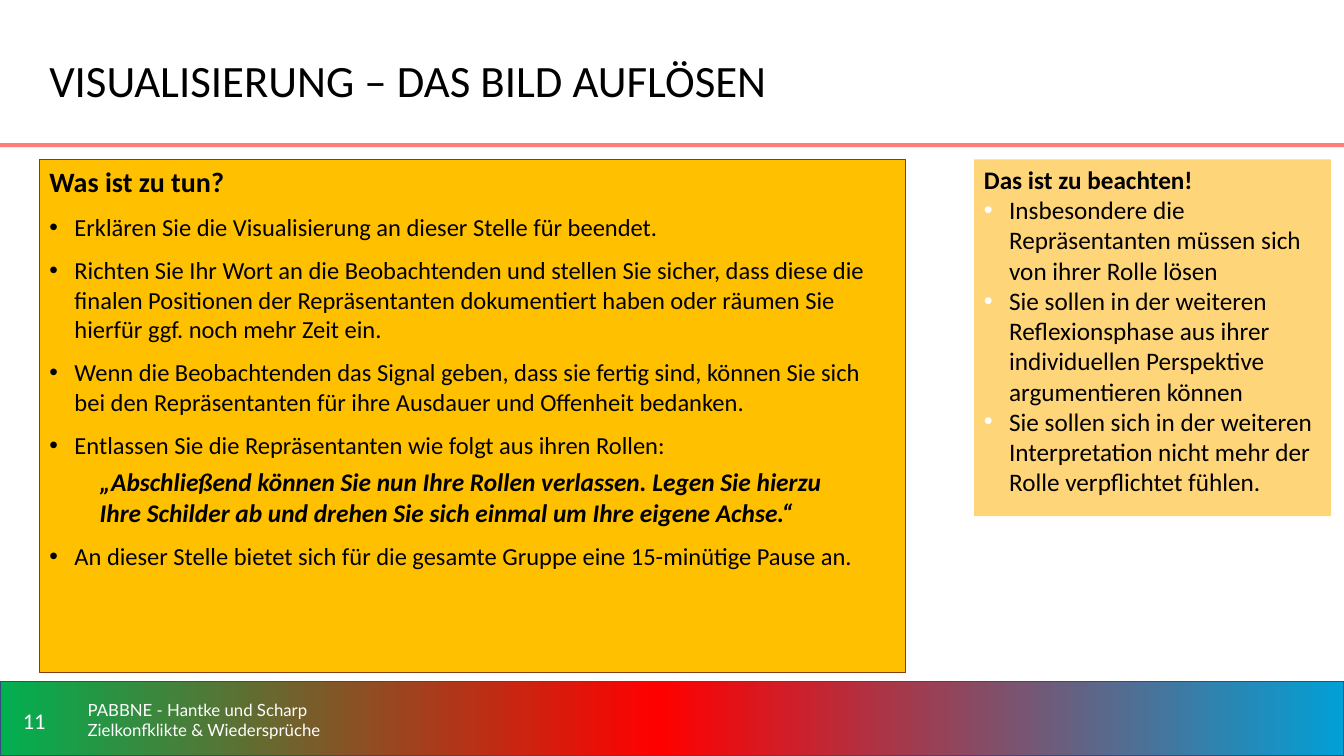
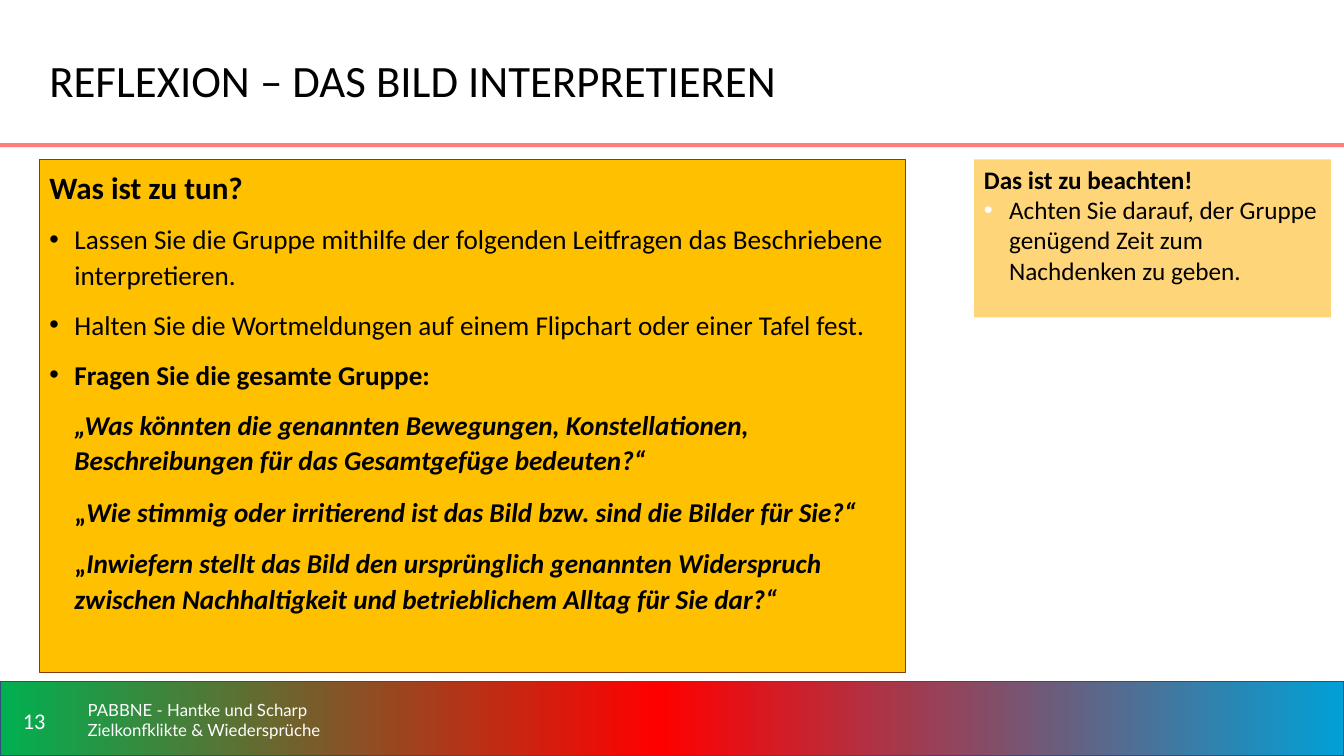
from copy import deepcopy

from lxml import etree
from pptx import Presentation
from pptx.dml.color import RGBColor
from pptx.enum.shapes import MSO_SHAPE
from pptx.enum.text import MSO_ANCHOR, PP_ALIGN
from pptx.oxml.ns import qn
from pptx.util import Inches, Pt

RECT = MSO_SHAPE.RECTANGLE
TOP, MIDDLE = MSO_ANCHOR.TOP, MSO_ANCHOR.MIDDLE
LEFT, CENTER = PP_ALIGN.LEFT, PP_ALIGN.CENTER

COLORS = {
    "text": "000000",
    "light": "FFFFFF",
    "rule": "FF7E79",
    "task": "FFC000",
    "task_line": "833C0B",
    "note": "FFD579",
    "band_line": "364A7D",
}
BAND_STOPS = [(0, "00B050"), (0.49, "FF0000"), (1, "01A0D6")]
BODY_FONT, CREDIT_FONT = "Calibri", "Lato"
CREDIT = "PABBNE - Hantke und Scharp Zielkonfklikte & Wiedersprüche"
TASK_HEAD, NOTE_HEAD = "Was ist zu tun?", "Das ist zu beachten!"

SLIDE = (0, 0, Inches(13.33), Inches(7.5))
REGIONS = {
    "title": (2.93, 2.67, 73.8, 15.73),
    "rule": (0, 18.93, 100, 0.53),
    "task": (2.93, 21.07, 64.44, 67.87),
    "note": (72.47, 21.07, 26.56, 0),
    "footer": (0, 90.13, 100, 9.87),
}


def rgb(name):
    return RGBColor.from_string(COLORS[name])


def part(box, shares):
    x, y, w, h = box
    px, py, pw, ph = shares
    return [round(v) for v in (x + w * px / 100, y + h * py / 100,
                               w * pw / 100, h * ph / 100)]


def head(text, **fmt):
    return {"runs": [(text, {"bold": True})], **fmt}


def item(text, bold=False, **fmt):
    return {"runs": [(text, {"bold": bold})], "indent": 0.25, "bullet": True, **fmt}


def quote(text, mark="", **fmt):
    runs = [(mark, {"bold": True})] if mark else []
    runs.append((text, {"bold": True, "italic": True}))
    return {"runs": runs, "indent": 0.25, "level": 1, **fmt}


def set_indent(p, indent, bullet_color):
    pPr = p._p.get_or_add_pPr()
    pPr.set("marL", str(Inches(indent)))
    pPr.set("indent", str(-Inches(indent) if bullet_color else 0))
    if bullet_color:
        clr = etree.SubElement(pPr, qn("a:buClr"))
        etree.SubElement(clr, qn("a:srgbClr"), val=COLORS[bullet_color])
        etree.SubElement(pPr, qn("a:buFont"), typeface="Arial")
        etree.SubElement(pPr, qn("a:buChar"), char="•")


def write(sp, paragraphs, size, color="text", font=BODY_FONT, anchor=TOP,
          align=LEFT, spacing=1.0, bullet_color="text"):
    tf = sp.text_frame
    frame = {"word_wrap": True, "vertical_anchor": anchor,
             "margin_left": Inches(0.1), "margin_right": Inches(0.1),
             "margin_top": Inches(0.05), "margin_bottom": Inches(0.05)}
    for name, value in frame.items():
        setattr(tf, name, value)
    for n, spec_ in enumerate(paragraphs):
        p = tf.paragraphs[0] if n == 0 else tf.add_paragraph()
        set_indent(p, spec_.get("indent", 0),
                   bullet_color if spec_.get("bullet") else None)
        values = {"alignment": align, "line_spacing": spacing,
                  "space_before": Pt(spec_.get("before", 0)),
                  "level": spec_.get("level", 0)}
        for name, value in values.items():
            setattr(p, name, value)
        for text, style in spec_["runs"]:
            for k, line in enumerate(text.split("\n")):
                if k:
                    p.add_line_break()
                r = p.add_run()
                r.text = line
                fmt = {"name": font, "size": Pt(spec_.get("size", size)), **style}
                for name, value in fmt.items():
                    setattr(r.font, name, value)
                r.font.color.rgb = rgb(color)


def add_rect(s, box, fill=None, line=None, width=0.75):
    sp = s.shapes.add_shape(RECT, *box)
    sp.shadow.inherit = False
    if fill:
        sp.fill.solid()
        sp.fill.fore_color.rgb = rgb(fill)
    if line:
        sp.line.color.rgb = rgb(line)
        sp.line.width = Pt(width)
    else:
        sp.line.fill.background()
    return sp


def add_label(s, box, text, size, **fmt):
    sp = s.shapes.add_textbox(*box)
    write(sp, [{"runs": [(text, {})]}], size, anchor=MIDDLE, **fmt)


def add_footer(s, box, number):
    sp = add_rect(s, box, line="band_line", width=1)
    sp.fill.gradient()
    sp.fill.gradient_angle = 0
    stops = sp._element.spPr.find(qn("a:gradFill")).find(qn("a:gsLst"))
    stops.append(deepcopy(stops[0]))
    for stop, (position, color) in zip(sp.fill.gradient_stops, BAND_STOPS):
        stop.position = position
        stop.color.rgb = RGBColor.from_string(color)
    add_label(s, part(box, (0, 11, 5.1, 82)), str(number), 16,
              color="light", align=CENTER)
    add_label(s, part(box, (5.78, 11, 20.86, 82)), CREDIT, 12,
              color="light", font=CREDIT_FONT)


def add_header(s, title_box, rule_box, title):
    add_rect(s, rule_box, "rule")
    add_label(s, title_box, title, 32)


def add_task(s, box, paragraphs, size, head_size, spacing):
    sp = add_rect(s, box, "task", "task_line")
    write(sp, [head(TASK_HEAD, size=head_size)] + paragraphs, size, spacing=spacing)


def add_note(s, box, notes):
    sp = add_rect(s, box, "note")
    write(sp, [head(NOTE_HEAD)] + [item(text) for text in notes], 18,
          bullet_color="light")


def add_step_slide(prs, number, title, task, notes, note_height):
    s = prs.slides.add_slide(prs.slide_layouts[6])
    boxes = {name: part(SLIDE, shares) for name, shares in REGIONS.items()}
    boxes["note"][3] = round(SLIDE[3] * note_height / 100)
    add_footer(s, boxes["footer"], number)
    add_header(s, boxes["title"], boxes["rule"], title)
    add_task(s, boxes["task"], **task)
    add_note(s, boxes["note"], notes)


STEPS = [
    {
        "number": 11,
        "title": "VISUALISIERUNG – DAS BILD AUFLÖSEN",
        "task": {
            "size": 17.5, "head_size": 20, "spacing": 1.0,
            "paragraphs": [
                item("Erklären Sie die Visualisierung an dieser Stelle für beendet.", before=10),
                item("Richten Sie Ihr Wort an die Beobachtenden und stellen Sie sicher, "
                     "dass diese die finalen Positionen der Repräsentanten dokumentiert "
                     "haben oder räumen Sie hierfür ggf. noch mehr Zeit ein.", before=10),
                item("Wenn die Beobachtenden das Signal geben, dass sie fertig sind, "
                     "können Sie sich bei den Repräsentanten für ihre Ausdauer und "
                     "Offenheit bedanken.", before=10),
                item("Entlassen Sie die Repräsentanten wie folgt aus ihren Rollen:", before=10),
                quote("„Abschließend können Sie nun Ihre Rollen verlassen. Legen Sie hierzu \n"
                      "Ihre Schilder ab und drehen Sie sich einmal um Ihre eigene Achse.“",
                      indent=0.5, before=5, size=18.1),
                item("An dieser Stelle bietet sich für die gesamte Gruppe eine "
                     "15-minütige Pause an.", before=10),
            ],
        },
        "notes": [
            "Insbesondere die Repräsentanten müssen sich von ihrer Rolle lösen",
            "Sie sollen in der weiteren Reflexionsphase aus ihrer individuellen "
            "Perspektive argumentieren können",
            "Sie sollen sich in der weiteren Interpretation nicht mehr der Rolle "
            "verpflichtet fühlen.",
        ],
        "note_height": 47.2,
    },
    {
        "number": 13,
        "title": "REFLEXION – DAS BILD INTERPRETIEREN",
        "task": {
            "size": 19.4, "head_size": 22.2, "spacing": 1.1,
            "paragraphs": [
                item("Lassen Sie die Gruppe mithilfe der folgenden Leitfragen das "
                     "Beschriebene interpretieren.", before=10),
                item("Halten Sie die Wortmeldungen auf einem Flipchart oder einer "
                     "Tafel fest.", before=10),
                item("Fragen Sie die gesamte Gruppe:", bold=True, before=10),
                quote("„Was könnten die genannten Bewegungen, Konstellationen, "
                      "Beschreibungen für das Gesamtgefüge bedeuten?“", before=10),
                quote("Wie stimmig oder irritierend ist das Bild bzw. sind die Bilder "
                      "für Sie?“", mark="„", before=11),
                quote("Inwiefern stellt das Bild den ursprünglich genannten Widerspruch "
                      "zwischen Nachhaltigkeit und betrieblichem Alltag für Sie dar?“",
                      mark="„", before=11),
            ],
        },
        "notes": ["Achten Sie darauf, der Gruppe genügend Zeit zum Nachdenken zu geben."],
        "note_height": 20.93,
    },
]


def main():
    prs = Presentation()
    prs.slide_width, prs.slide_height = SLIDE[2:]
    for step in STEPS:
        add_step_slide(prs, **step)
    prs.save("out.pptx")


if __name__ == "__main__":
    main()
